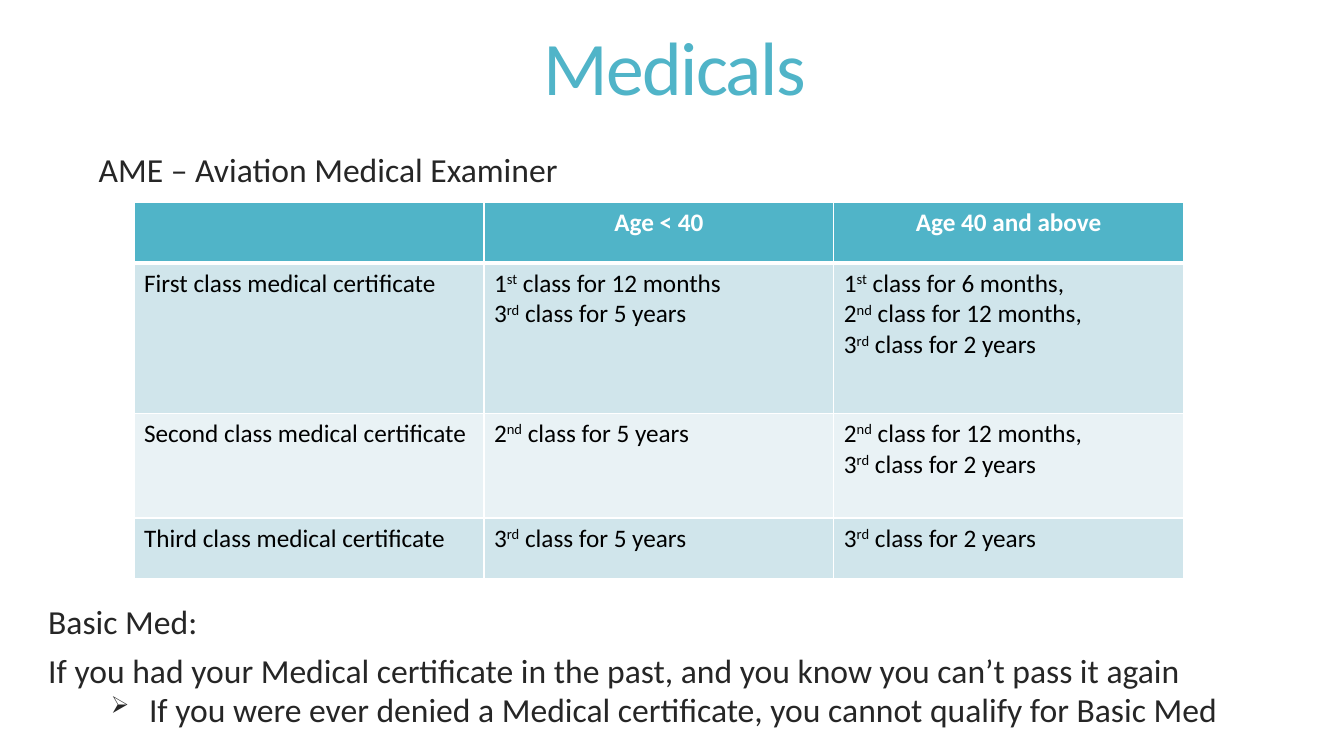
from lxml import etree
from pptx import Presentation
from pptx.dml.color import RGBColor
from pptx.enum.text import MSO_ANCHOR, PP_ALIGN
from pptx.oxml.ns import qn
from pptx.util import Inches, Pt

LEFT, CENTER = PP_ALIGN.LEFT, PP_ALIGN.CENTER
TOP, MIDDLE = MSO_ANCHOR.TOP, MSO_ANCHOR.MIDDLE
FONT = "Calibri"
COLORS = {
    "teal": "50B4C8",
    "dark": "262626",
    "black": "000000",
    "white": "FFFFFF",
    "band": "D0E5EB",
    "pale": "E9F2F5",
}
# Text between carets is raised.
ROWS = [
    ["", "Age < 40", "Age 40 and above"],
    ["First class medical certificate",
     "1^st^ class for 12 months\n3^rd^ class for 5 years",
     "1^st^ class for 6 months,\n2^nd^ class for 12 months,\n3^rd^ class for 2 years"],
    ["Second class medical certificate",
     "2^nd^ class for 5 years",
     "2^nd^ class for 12 months,\n3^rd^ class for 2 years"],
    ["Third class medical certificate",
     "3^rd^ class for 5 years",
     "3^rd^ class for 2 years"],
]
HEIGHTS = [0.6, 1.49, 1.04, 0.6]


def rgb(name):
    return RGBColor.from_string(COLORS[name])


def write(par, text, size=24, color="dark", bold=False, align=LEFT,
          line=None, before=None, track=None):
    """Fill a paragraph, raising the parts set between carets."""
    par.alignment = align
    if line:
        par.line_spacing = line
    if before:
        par.space_before = Pt(before)
    for i, part in enumerate(text.split("^")):
        run = par.add_run()
        run.text = part
        font = run.font
        font.name, font.size, font.bold = FONT, Pt(size), bold
        font.color.rgb = rgb(color)
        if i % 2:
            font._element.set("baseline", "30000")
        if track:
            font._element.set("spc", str(round(track * 100)))


def bullet(par, char, left, hang, scale):
    props = par._p.get_or_add_pPr()
    props.set("marL", str(Inches(left)))
    props.set("indent", str(-Inches(hang)))
    etree.SubElement(props, qn("a:buSzPct"), val=str(scale * 1000))
    etree.SubElement(props, qn("a:buChar"), char=char)


def border(cell, widths):
    """Draw white cell edges; widths maps each side to points."""
    props = cell._tc.get_or_add_tcPr()
    for i, (side, width) in enumerate(widths.items()):
        edge = etree.Element(qn("a:ln" + side), w=str(Pt(width)))
        fill = etree.SubElement(edge, qn("a:solidFill"))
        etree.SubElement(fill, qn("a:srgbClr"), val=COLORS["white"])
        props.insert(i, edge)


class Deck:
    def __init__(self):
        self.prs = Presentation()
        self.prs.slide_width = Inches(13.33)
        self.prs.slide_height = Inches(7.5)
        self.slide = self.prs.slides.add_slide(self.prs.slide_layouts[6])

    def text(self, box, lines, anchor=TOP, **style):
        """Add a text box and return its paragraphs."""
        frame = self.slide.shapes.add_textbox(*map(Inches, box)).text_frame
        frame.word_wrap = True
        frame.vertical_anchor = anchor
        for i, line in enumerate(lines):
            par = frame.add_paragraph() if i else frame.paragraphs[0]
            write(par, line, **style)
        return frame.paragraphs

    def table(self, box, rows, heights):
        table = self.slide.shapes.add_table(
            len(rows), len(rows[0]), *map(Inches, box)).table
        table.horz_banding = False
        for col in table.columns:
            col.width = Inches(box[2] / len(rows[0]))
        for r, row in enumerate(rows):
            table.rows[r].height = Inches(heights[r])
            for c, text in enumerate(row):
                self.cell(table.cell(r, c), text, r)

    def cell(self, cell, text, row):
        head = row == 0
        fill = "teal" if head else "band" if row % 2 else "pale"
        cell.fill.solid()
        cell.fill.fore_color.rgb = rgb(fill)
        border(cell, {"L": 1, "R": 1, "T": 3 if row == 1 else 1,
                      "B": 3 if head else 1})
        for i, line in enumerate(text.split("\n")):
            frame = cell.text_frame
            par = frame.add_paragraph() if i else frame.paragraphs[0]
            write(par, line, size=18, color="white" if head else "black",
                  bold=head, align=CENTER if head else LEFT)


def main():
    deck = Deck()
    deck.text((0.88, 0.02, 11.62, 1.4), ["Medicals"], anchor=MIDDLE, size=54,
              color="teal", align=CENTER, line=0.85, track=-1.2)
    deck.text((0.88, 1.49, 11.62, 0.52), ["AME – Aviation Medical Examiner"],
              line=0.85)
    deck.table((1.33, 2.01, 10.41, 3.74), ROWS, HEIGHTS)
    _, past, denied = deck.text((0.38, 6.01, 12.95, 1.28), [
        "Basic Med:",
        "If you had your Medical certificate in the past, and you know you can’t pass it again",
        "If you were ever denied a Medical certificate, you cannot qualify for Basic Med",
    ], line=0.75)
    past.space_before = Pt(13)
    denied.space_before = Pt(6)
    denied.level = 1
    bullet(denied, "➢", left=1, hang=0.38, scale=70)
    deck.prs.save("out.pptx")


if __name__ == "__main__":
    main()
